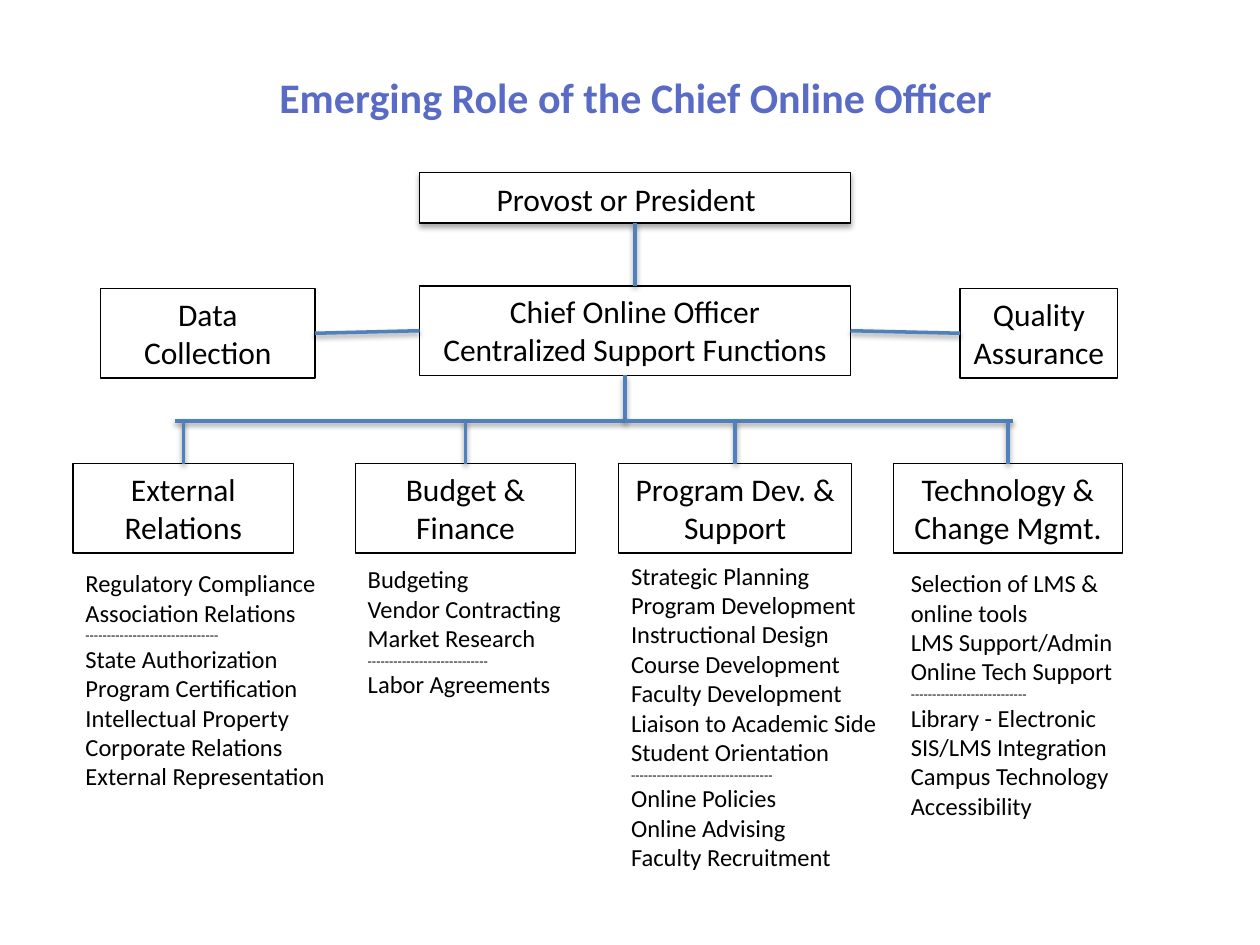
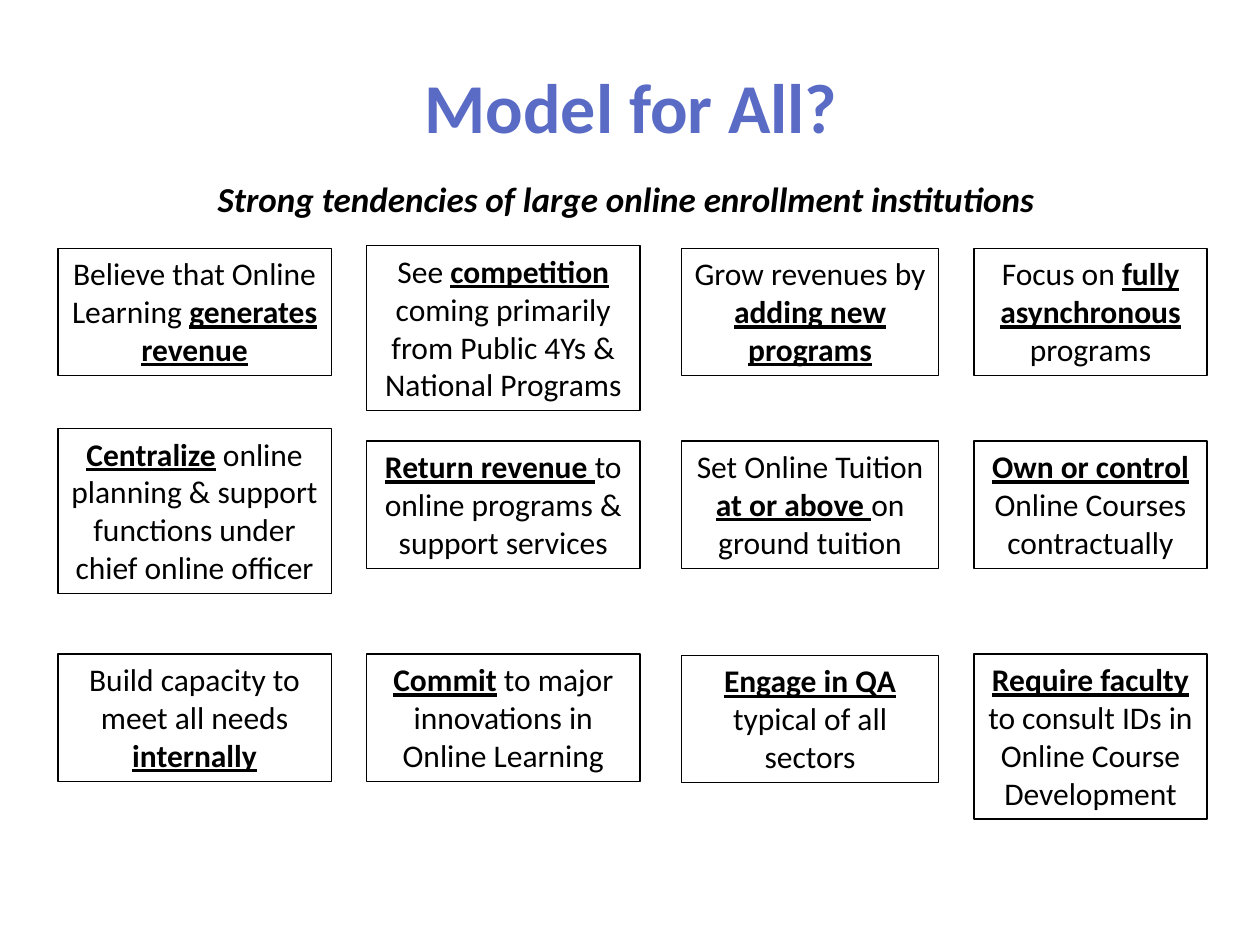
from pptx import Presentation
from pptx.util import Inches, Pt
from pptx.dml.color import RGBColor
from pptx.enum.shapes import MSO_CONNECTOR, MSO_SHAPE
from pptx.enum.text import MSO_ANCHOR, MSO_AUTO_SIZE, PP_ALIGN
from pptx.oxml import parse_xml
from pptx.oxml.ns import nsdecls

BLACK = RGBColor(0x00, 0x00, 0x00)
WHITE = RGBColor(0xFF, 0xFF, 0xFF)
TITLE_BLUE = RGBColor(0x59, 0x6B, 0xC5)
LINE_BLUE = RGBColor(0x4F, 0x81, 0xBD)
FONT = "Calibri"
TOP, LEFT, BOTTOM, RIGHT = range(4)


class Deck:
    """Shared style and the slide being built."""

    def __init__(self):
        self.prs = Presentation()
        self.prs.slide_width, self.prs.slide_height = Inches(10), Inches(7.5)
        self.slide = None

    def new_slide(self):
        self.slide = self.prs.slides.add_slide(self.prs.slide_layouts[6])

    def set_text(self, sp, lines, size=18, color=BLACK, bold=None, italic=None,
                 align=PP_ALIGN.CENTER, anchor=MSO_ANCHOR.TOP, grow=True):
        """Fill a shape; *starred* words become bold and underlined."""
        tf = sp.text_frame
        tf.word_wrap = True
        tf.vertical_anchor = anchor
        tf.auto_size = MSO_AUTO_SIZE.SHAPE_TO_FIT_TEXT if grow else MSO_AUTO_SIZE.NONE
        for i, line in enumerate(lines):
            p = tf.add_paragraph() if i else tf.paragraphs[0]
            p.alignment = align
            p.font.name, p.font.color.rgb = FONT, color
            p.font.size = Pt(8 if line.startswith("--") else size)
            p.font.bold, p.font.italic = bold, italic
            for j, part in enumerate(line.split("*")):
                if part:
                    r = p.add_run()
                    r.text = part
                    if j % 2:
                        r.font.bold = r.font.underline = True

    def text(self, x, y, w, h, lines, **style):
        sp = self.slide.shapes.add_textbox(Inches(x), Inches(y), Inches(w), Inches(h))
        self.set_text(sp, lines, **style)

    def title(self, x, y, w, h, words, size):
        self.text(x, y, w, h, [words], size=size, color=TITLE_BLUE, bold=True,
                  anchor=MSO_ANCHOR.MIDDLE, grow=False)

    def box(self, x, y, w, h, lines=(), shape=MSO_SHAPE.RECTANGLE):
        sp = self.slide.shapes.add_shape(
            shape, Inches(x), Inches(y), Inches(w), Inches(h))
        sp.shadow.inherit = False
        sp.fill.background()
        sp.line.color.rgb, sp.line.width = BLACK, Pt(0.75)
        if lines:
            self.set_text(sp, lines)
        return sp

    def shadow(self, sp, opacity, distance):
        spPr = sp._element.spPr
        for old in spPr.findall("{*}effectLst"):
            spPr.remove(old)
        spPr.append(parse_xml(
            f'<a:effectLst {nsdecls("a")}><a:outerShdw blurRad="{Pt(3.1)}" '
            f'dist="{Pt(distance)}" dir="5400000" rotWithShape="0">'
            f'<a:srgbClr val="{BLACK}"><a:alpha val="{opacity * 1000}"/></a:srgbClr>'
            '</a:outerShdw></a:effectLst>'))

    def line(self, x1, y1, x2, y2, begin=None, end=None):
        """Draw a line; begin and end are (shape, side) joints."""
        c = self.slide.shapes.add_connector(
            MSO_CONNECTOR.STRAIGHT, Inches(x1), Inches(y1), Inches(x2), Inches(y2))
        if begin:
            c.begin_connect(*begin)
        if end:
            c.end_connect(*end)
        c.line.color.rgb, c.line.width = LINE_BLUE, Pt(2)
        self.shadow(c, 38, 1.6)


# Department: left, width, heading, list left, list top, list width, list
DEPARTMENTS = [
    (0.58, 1.75, "External Relations", 0.58, 4.46, 2.24,
     ["Regulatory Compliance", "Association Relations", "-" * 31,
      "State Authorization", "Program Certification", "Intellectual Property",
      "Corporate Relations", "External Representation"]),
    (2.82, 1.75, "Budget & Finance", 2.82, 4.43, 1.91,
     ["Budgeting", "Vendor Contracting", "Market Research", "-" * 28,
      "Labor Agreements"]),
    (4.91, 1.85, "Program Dev. & Support", 4.91, 4.4, 2.18,
     ["Strategic Planning", "Program Development", "Instructional Design",
      "Course Development", "Faculty Development", "Liaison to Academic Side",
      "Student Orientation", "-" * 33, "Online Policies", "Online Advising",
      "Faculty Recruitment"]),
    (7.09, 1.82, "Technology & Change Mgmt.", 7.13, 4.46, 1.82,
     ["Selection of LMS & online tools", "LMS Support/Admin",
      "Online Tech Support", "-" * 27, "Library - Electronic",
      "SIS/LMS Integration", "Campus Technology", "Accessibility"]),
]

# Columns (left, width) and rows of (text, top, number of lines)
COLUMNS = [(0.46, 2.17), (2.91, 2.17), (5.41, 2.04), (7.73, 1.85)]
TENDENCIES = [
    [(["Believe that Online Learning *generates revenue*"], 1.97, 3),
     (["See *competition *coming primarily from Public 4Ys &",
       "National Programs"], 1.95, 4),
     (["Grow revenues by *adding new programs*"], 1.97, 3),
     (["Focus on *fully asynchronous *programs"], 1.97, 3)],
    [(["*Centralize* online planning & support functions under "
       "chief online officer"], 3.4, 4),
     (["*Return revenue *to online programs & support services"], 3.5, 3),
     (["Set Online Tuition *at or above *on ground tuition"], 3.5, 3),
     (["*Own or control *Online Courses contractually"], 3.5, 3)],
    [(["Build capacity to meet all needs *internally*"], 5.19, 3),
     (["*Commit* to major innovations in Online Learning"], 5.19, 3),
     (["*Engage in QA *typical of all sectors"], 5.2, 3),
     (["*Require faculty *to consult IDs in Online Course Development"], 5.19, 4)],
]


def org_chart(deck):
    deck.new_slide()
    deck.title(1.31, 0.31, 7.47, 0.91, "Emerging Role of the Chief Online Officer", 24)

    # Leadership and its two side functions
    provost = deck.box(3.33, 1.37, 3.42, 0.4, shape=MSO_SHAPE.FLOWCHART_PROCESS)
    provost.fill.solid()
    provost.fill.fore_color.rgb = WHITE
    deck.shadow(provost, 35, 1.8)
    deck.text(3.66, 1.38, 2.62, 0.4, ["Provost or President"])
    officer = deck.box(3.33, 2.27, 3.42, 0.71,
                       ["Chief Online Officer", "Centralized Support Functions"])
    data = deck.box(0.8, 2.29, 1.7, 0.71, ["Data", "Collection"])
    quality = deck.box(7.62, 2.29, 1.25, 0.71, ["Quality Assurance"])
    deck.line(5.04, 1.78, 5.04, 2.27, (provost, BOTTOM), (officer, TOP))
    deck.line(2.5, 2.64, 3.33, 2.63, (data, RIGHT), (officer, LEFT))
    deck.line(6.75, 2.63, 7.62, 2.64, (officer, RIGHT), (quality, LEFT))

    # Stem and the bus to both sides
    stem, bus, row = 4.96, 3.34, 3.68
    deck.line(stem, 2.98, stem, bus)
    for end in (1.39, 8.04):
        deck.line(stem, bus, end, bus)

    # Departments with their duties
    for x, w, name, list_x, list_y, list_w, duties in DEPARTMENTS:
        head = deck.box(x, row, w, 0.71, [name])
        deck.line(x + w / 2, bus, x + w / 2, row, end=(head, TOP))
        deck.text(list_x, list_y, list_w, 2.12, duties, size=14, align=PP_ALIGN.LEFT)


def model_for_all(deck):
    deck.new_slide()
    deck.title(1.71, 0.48, 6.6, 0.71, "Model for All?", 40)
    deck.text(1.62, 1.36, 6.7, 0.44,
              ["Strong tendencies of large online enrollment institutions"],
              size=20, bold=True, italic=True)
    for tendencies in TENDENCIES:
        for (x, w), (lines, y, count) in zip(COLUMNS, tendencies):
            deck.box(x, y, w, 0.11 + 0.3 * count, lines)


def main():
    deck = Deck()
    org_chart(deck)
    model_for_all(deck)
    deck.prs.save("out.pptx")


if __name__ == "__main__":
    main()
